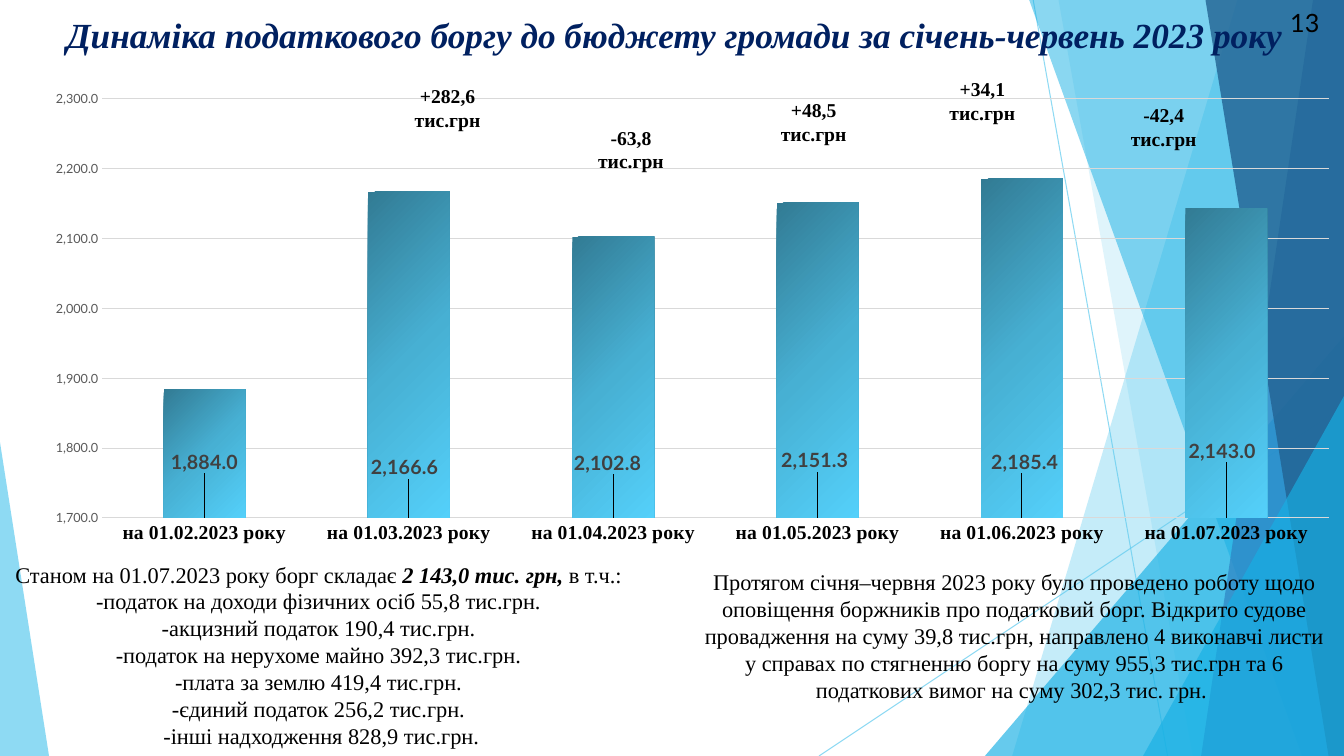
"""Builds the slide on tax debt of the community budget for January-June 2023."""
from copy import deepcopy
from lxml.etree import SubElement
from pptx import Presentation
from pptx.chart.data import CategoryChartData as Data
from pptx.dml.color import RGBColor as RGB
from pptx.enum.chart import XL_CHART_TYPE as Kind, XL_LABEL_POSITION as Spot, XL_TICK_MARK as Tick
from pptx.enum.shapes import MSO_CONNECTOR as Link, MSO_SHAPE as Form
from pptx.enum.text import MSO_ANCHOR as Hold, PP_ALIGN as Align
from pptx.oxml import parse_xml
from pptx.oxml.ns import nsdecls, qn
from pptx.util import Pt


class Theme:
    sky, blue, steel, navy = "5FCBEF", "17B0E4", "2E83C3", "226292"
    grid = "D9D9D9"
    stops = [(0, "327B94"), (0.5, "47B0D3"), (1, "54D0FA")]
    serif, sans = "Times New Roman", "Lato"
    head = dict(name=serif, size=Pt(25.2), bold=True, italic=True, color="002060")
    body = dict(name=serif, size=Pt(16), color="000000")
    strong = dict(body, bold=True, italic=True)
    note = dict(name=serif, size=Pt(14), bold=True, color="000000")
    page = dict(name=sans, size=Pt(18), color="000000")
    base = dict(name=sans, size=Pt(10), color="000000")
    scale = dict(name=sans, size=Pt(9), bold=False, color="595959")
    label = dict(name=sans, size=Pt(14), bold=True, color="404040")


def dress(font, style):
    for key, val in style.items():
        if key == "color":
            font.color.rgb = RGB.from_string(val)
        else:
            setattr(font, key, val)


def tint(shape, paint, hue, alpha):
    paint.solid()
    paint.fore_color.rgb = RGB.from_string(hue)
    tone = shape.element.xpath(".//a:srgbClr")[0]
    SubElement(tone, qn("a:alpha"), val=str(alpha * 1000))


deck = Presentation()
deck.slide_width, deck.slide_height = Pt(960), Pt(540)
slide = deck.slides.add_slide(deck.slide_layouts[6])
shapes = slide.shapes

for ends in [(738, 0, 834, 540), (960, 290, 585, 540)]:
    ray = shapes.add_connector(Link.STRAIGHT, *map(Pt, ends))
    ray.line.width = Pt(0.75)
    tint(ray, ray.line.fill, Theme.sky, 70)
    SubElement(ray.element.spPr, qn("a:effectLst"))

facets = [
    ("strip", (884, 723), Theme.sky, 36),
    ("strip", (756, 852), Theme.sky, 20),
    ("wedge", (703.5, 240, 256.5, 300, 1), Theme.blue, 66),
    ("strip", (735, 930), Theme.blue, 50),
    ("strip", (938, 858), Theme.steel, 70),
    ("strip", (861, 949), Theme.navy, 80),
    ("wedge", (816.5, 283, 143.5, 257, 1), Theme.blue, 66),
    ("wedge", (0, 316, 35, 224, 0), Theme.sky, 70),
]
for kind, geom, hue, alpha in facets:
    if kind == "strip":
        top, foot = geom
        pen = shapes.build_freeform(Pt(top), Pt(-0.5))
        pen.add_line_segments([(Pt(960), Pt(-0.5)), (Pt(960), Pt(540)), (Pt(foot), Pt(540))])
        facet = pen.convert_to_shape()
    else:
        *box, peak = geom
        facet = shapes.add_shape(Form.ISOSCELES_TRIANGLE, *map(Pt, box))
        facet.adjustments[0] = peak
    facet.shadow.inherit = False
    facet.line.fill.background()
    tint(facet, facet.fill, hue, alpha)

debts = {
    "на 01.02.2023 року": 1884.0,
    "на 01.03.2023 року": 2166.6,
    "на 01.04.2023 року": 2102.8,
    "на 01.05.2023 року": 2151.3,
    "на 01.06.2023 року": 2185.4,
    "на 01.07.2023 року": 2143.0,
}
data = Data(number_format="#,##0.0")
data.categories = list(debts)
data.add_series("Series 1", list(debts.values()))
wide, high = 928, 359
frame = shapes.add_chart(Kind.COLUMN_CLUSTERED, Pt(24), Pt(43), Pt(wide), Pt(high), data)
chart = frame.chart
chart.has_legend = chart.has_title = False
dress(chart.font, Theme.base)
plot = chart.plots[0]
plot.gap_width, plot.vary_by_categories = 150, False

cats, vals = chart.category_axis, chart.value_axis
for axis, style in [(cats, Theme.note), (vals, Theme.scale)]:
    axis.major_tick_mark = axis.minor_tick_mark = Tick.NONE
    axis.format.line.fill.background()
    dress(axis.tick_labels.font, style)
limits = dict(minimum_scale=1700, maximum_scale=2300, major_unit=100, has_major_gridlines=True)
for key, val in limits.items():
    setattr(vals, key, val)
rule = vals.major_gridlines.format.line
rule.width = Pt(0.75)
rule.color.rgb = RGB.from_string(Theme.grid)

bars = plot.series[0]
fill = bars.format.fill
fill.gradient()
fill.gradient_angle = 315
ramp = chart.element.xpath(".//c:ser/c:spPr/a:gradFill/a:gsLst")[0]
ramp.append(deepcopy(ramp[0]))
for stop, (place, hue) in zip(fill.gradient_stops, Theme.stops):
    stop.position = place
    stop.color.rgb = RGB.from_string(hue)

tags = bars.data_labels
tags.show_value = True
dress(tags.font, Theme.label)
for holder in (tags, vals.tick_labels):
    holder.number_format, holder.number_format_is_linked = "#,##0.0", False

shifts = [(0, -29), (-3, -25), (-4, -28), (-2, -30), (2, -29), (-3, -37)]
for num in range(len(shifts)):
    tag = bars.points[num].data_label
    tag.position = Spot.INSIDE_BASE
    dress(tag.font, Theme.label)
nodes = chart.element.xpath(".//c:dLbl")
for node in nodes:
    form = SubElement(node, qn("c:numFmt"), formatCode="#,##0.0", sourceLinked="0")
    node.insert(1, form)

area = chart.element.xpath(".//c:plotArea")[0]
for old in area.xpath("c:layout"):
    area.remove(old)
inner = dict(layoutTarget="inner", xMode="edge", yMode="edge",
             x=49 / wide, y=27.6 / high, w=876 / wide, h=299.4 / high)
spots = [(area, 0, inner)]
spots += [(node, 1, dict(x=dx / wide, y=dy / high)) for node, (dx, dy) in zip(nodes, shifts)]
for node, slot, parts in spots:
    layout = parse_xml(f"<c:layout {nsdecls('c')}><c:manualLayout/></c:layout>")
    for key, val in parts.items():
        SubElement(layout[0], qn(f"c:{key}"), val=str(val))
    node.insert(slot, layout)

texts = [
    ((21, 3.5, 928, 42), Hold.MIDDLE, Align.CENTER, Theme.head,
     ["Динаміка податкового боргу до бюджету громади за січень-червень 2023 року "]),
    ((0, 397, 459, 143), Hold.TOP, Align.CENTER, Theme.body, [
        [("Станом на 01.07.2023 року борг складає ", Theme.body),
         ("2 143,0 тис. грн, ", Theme.strong), ("в т.ч.: ", Theme.body)],
        "-податок на доходи фізичних осіб 55,8 тис.грн. ",
        "-акцизний податок 190,4 тис.грн. ",
        "-податок на нерухоме майно 392,3 тис.грн. ",
        "-плата за землю 419,4 тис.грн. ",
        "-єдиний податок 256,2 тис.грн. ",
        "-інші надходження 828,9 тис.грн."]),
    ((914.5, 2, 44, 29), Hold.TOP, Align.LEFT, Theme.page, ["13"]),
    ((494, 402.5, 461, 104), Hold.TOP, Align.CENTER, Theme.body, [
        "Протягом січня–червня 2023 року було проведено роботу щодо оповіщення боржників "
        "про податковий борг. Відкрито судове провадження на суму 39,8 тис.грн, направлено "
        "4 виконавчі листи у справах по стягненню боргу на суму 955,3 тис.грн та "
        "6 податкових вимог на суму 302,3 тис. грн. "]),
]
changes = [
    (277, 62, ["+282,6 тис.грн"]),
    (408, 91.5, ["-63,8", "тис.грн"]),
    (538.5, 72, ["+48,5 тис.грн"]),
    (659, 57, ["+34,1 тис.грн"]),
    (788.5, 75.5, ["-42,4 тис.грн"]),
]
for left, top, lines in changes:
    texts.append(((left, top, 85.5, 30), Hold.MIDDLE, Align.CENTER, Theme.note, lines))

for box, hold, align, style, lines in texts:
    text = shapes.add_textbox(*map(Pt, box)).text_frame
    text.word_wrap, text.vertical_anchor = True, hold
    for num, line in enumerate(lines):
        para = text.add_paragraph() if num else text.paragraphs[0]
        para.alignment = align
        for words, look in [(line, style)] if isinstance(line, str) else line:
            run = para.add_run()
            run.text = words
            dress(run.font, look)

deck.save("out.pptx")
